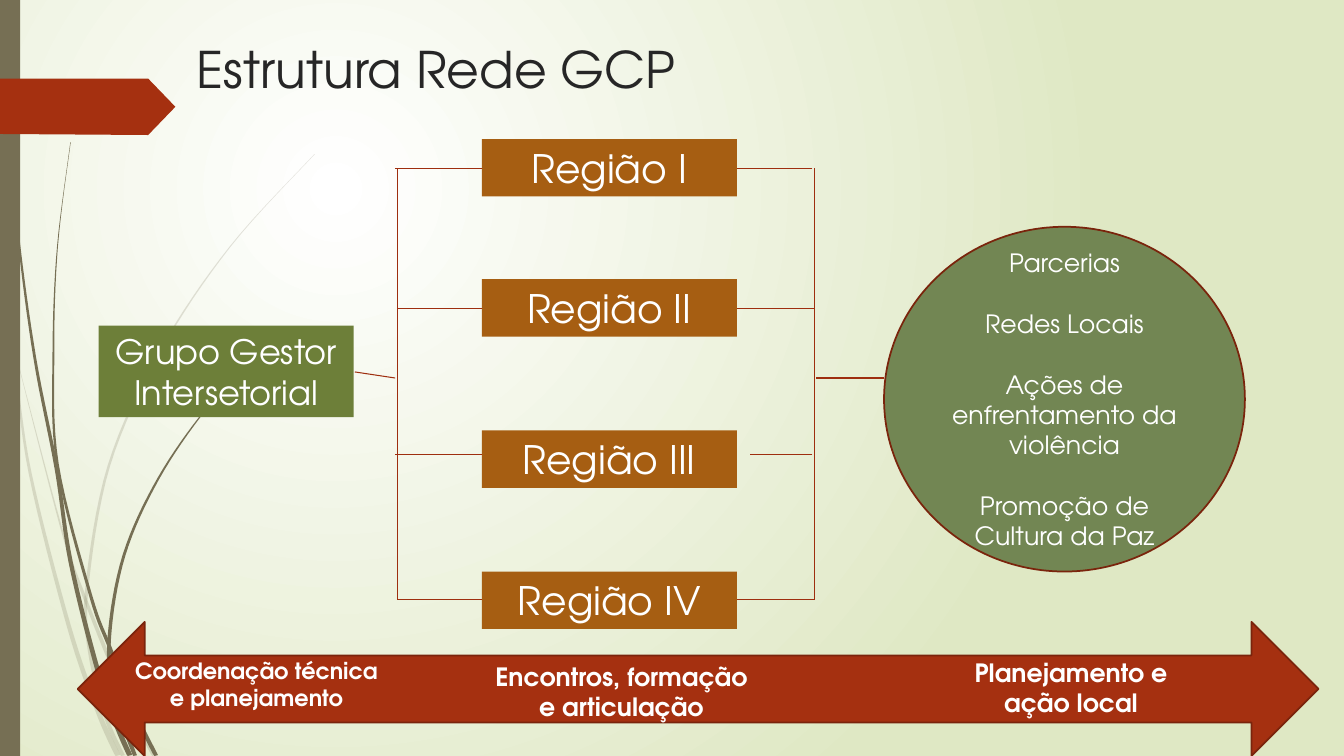
import math
from typing import NamedTuple

from lxml import etree
from pptx import Presentation
from pptx import util as u
from pptx.dml.color import RGBColor
from pptx.enum import shapes, text
from pptx.oxml import ns

WHITE = RGBColor(0xFF, 0xFF, 0xFF)
PALE_GREEN = RGBColor(0xDF, 0xE8, 0xC4)
OLIVE = RGBColor(0x6D, 0x7F, 0x39)
SAGE = RGBColor(0x72, 0x86, 0x53)
TAUPE = RGBColor(0x76, 0x6F, 0x54)
RUST = RGBColor(0xA5, 0x30, 0x10)
RUST_LINE = RGBColor(0x9E, 0x2E, 0x0F)
DARK_RUST = RGBColor(0x7A, 0x24, 0x0C)
AMBER = RGBColor(0xA6, 0x5E, 0x12)
CHARCOAL = RGBColor(0x26, 0x26, 0x26)

FONT = "TeX Gyre Adventor"
CELL = u.Inches(0.1)
COLUMNS = 133.33
ROWS = 75
LEFT_BUS = 39.4
RIGHT_BUS = 80.8
REGION_LEFT = 47.8
REGION_WIDTH = 25.3
REGION_HEIGHT = 5.7
REGION_RIGHT = REGION_LEFT + REGION_WIDTH
STRAND_STEPS = 8

Point = tuple[float, float]


class Box(NamedTuple):
    left: float
    top: float
    width: float
    height: float


class Region(NamedTuple):
    name: str
    top: float
    branch: float
    left_end: float = LEFT_BUS
    right_start: float = REGION_RIGHT
    right_end: float = RIGHT_BUS


class Caption(NamedTuple):
    words: str
    box: Box
    size: int


class Strand(NamedTuple):
    points: list[Point]
    width: float
    opacity: int


REGIONS = [
    Region("Região I", 13.8, 16.7, left_end=39.2, right_end=80.6),
    Region("Região II", 27.7, 30.6),
    Region("Região III", 42.7, 45.1, 39.2, 74.4, 80.6),
    Region("Região IV", 56.7, 59.5),
]
CAPTIONS = [
    Caption("Coordenação técnica e planejamento", Box(11.6, 64.7, 27.7, 6.4), 16),
    Caption("Encontros, formação e articulação", Box(47.8, 65.1, 27.7, 7.1), 18),
    Caption("Planejamento e ação local", Box(92.4, 64.7, 27.7, 7.1), 18),
]
PARTNERSHIPS = [
    "Parcerias",
    "Redes Locais",
    "Ações de enfrentamento da violência",
    "Promoção de Cultura da Paz",
]
STRANDS = [
    Strand([(0, 29), (1.4, 36), (3, 47), (6.8, 62), (9.7, 70.5), (11.7, 75)], 0.5, 20),
    Strand([(1.4, 34.5), (6, 52.1), (8.4, 59.3), (12.5, 69.3), (15.3, 75)], 0.45, 20),
    Strand([(31.2, 15.3), (22.8, 24.5), (15.9, 34.8), (10.8, 46.2),
            (8.6, 58.5), (8.9, 64.6), (10.5, 71.1), (12.2, 75)], 0.4, 20),
    Strand([(0.4, 0), (0.75, 11), (1.8, 23.3), (3.45, 35.5), (5.6, 46.5),
            (7, 55.7), (9.5, 65.8), (11.4, 71.5), (12.9, 75)], 0.5, 100),
    Strand([(7, 14.1), (5.7, 24.5), (5.3, 34.9), (5.7, 46), (9, 59.1),
            (11, 64.5), (13.4, 70.7), (15.5, 75)], 0.4, 100),
    Strand([(26, 34.4), (20.5, 40.5), (15.7, 47.5), (12.3, 55.1),
            (10.85, 63.2), (11.3, 69), (13.4, 75)], 0.4, 100),
]
RIBBON = [(0, 7.8), (14.7, 7.8), (17.4, 10.6), (14.7, 13.4), (0, 13.3)]


def cells(*counts: float) -> list[int]:
    return [round(count * CELL) for count in counts]


def paint(shape, fill: RGBColor, outline: RGBColor | None = None) -> None:
    shape.shadow.inherit = False
    shape.fill.solid()
    shape.fill.fore_color.rgb = fill
    if outline is None:
        shape.line.fill.background()
    else:
        shape.line.color.rgb = outline
        shape.line.width = u.Pt(1.25)


def write(shape, lines: list[str], size: int, bold: bool = False, gap: float = 0) -> None:
    frame = shape.text_frame
    frame.word_wrap = True
    frame.text = "\n".join(lines)
    for index, paragraph in enumerate(frame.paragraphs):
        paragraph.alignment = text.PP_ALIGN.CENTER
        paragraph.space_before = u.Pt(gap if index else 0)
        paragraph.font.name = FONT
        paragraph.font.size = u.Pt(size)
        paragraph.font.bold = bold
        paragraph.font.color.rgb = WHITE


def add_preset(slide, kind, box: Box, fill: RGBColor, outline: RGBColor | None = None):
    shape = slide.shapes.add_shape(kind, *cells(*box))
    paint(shape, fill, outline)
    return shape


def add_outline(slide, points: list[Point], fill: RGBColor, opacity: int = 100) -> None:
    corners = [cells(*point) for point in points]
    builder = slide.shapes.build_freeform(*corners[0], scale=1.0)
    builder.add_line_segments(corners[1:], close=True)
    shape = builder.convert_to_shape()
    paint(shape, fill)
    if opacity < 100:
        color = shape.fill._xPr.find(".//" + ns.qn("a:srgbClr"))
        etree.SubElement(color, ns.qn("a:alpha"), val=str(opacity * 1000))


def smooth_curve(points: list[Point]) -> list[Point]:
    padded = [points[0], *points, points[-1]]
    curve = []
    for before, start, end, after in zip(padded, padded[1:], padded[2:], padded[3:]):
        for step in range(STRAND_STEPS):
            t = step / STRAND_STEPS
            curve.append(tuple(
                b + ((c - a) * t + (2 * a - 5 * b + 4 * c - d) * t**2
                     + (3 * b - a - 3 * c + d) * t**3) / 2
                for a, b, c, d in zip(before, start, end, after)))
    return [*curve, points[-1]]


def add_strand(slide, strand: Strand) -> None:
    curve = smooth_curve(strand.points)
    last = len(curve) - 1
    near, far = [], []
    for index, (x, y) in enumerate(curve):
        before, after = curve[max(index - 1, 0)], curve[min(index + 1, last)]
        run, rise = after[0] - before[0], after[1] - before[1]
        half = strand.width / 2 * max(0.1, math.sin(math.pi * index / last / 2))
        reach = half / math.hypot(run, rise)
        for side, sign in ((near, 1), (far, -1)):
            edge_y = y + sign * run * reach
            side.append((max(x - sign * rise * reach, 0), min(max(edge_y, 0), ROWS)))
    add_outline(slide, near + far[::-1], TAUPE, strand.opacity)


def add_line(slide, start: Point, end: Point) -> None:
    line = slide.shapes.add_connector(
        shapes.MSO_CONNECTOR.STRAIGHT, *cells(*start, *end))
    line.line.color.rgb = RUST_LINE
    line.line.width = u.Pt(0.75)
    etree.SubElement(line._element.spPr, ns.qn("a:effectLst"))


def add_background(slide) -> None:
    fill = slide.background.fill
    fill.gradient()
    for stop, color, position in zip(fill.gradient_stops, (WHITE, PALE_GREEN), (0, 1)):
        stop.color.rgb = color
        stop.position = position
    gradient = slide._element.find(".//" + ns.qn("a:gradFill"))
    gradient.remove(gradient.find(ns.qn("a:lin")))
    circle = etree.SubElement(gradient, ns.qn("a:path"))
    circle.set("path", "circle")
    etree.SubElement(circle, ns.qn("a:fillToRect"),
                     l="50000", t="50000", r="100000", b="100000")


def add_title(slide) -> None:
    title = slide.shapes.title
    title.left, title.top, title.width, title.height = cells(18.5, 3.3, 105, 7)
    title.text_frame.text = "Estrutura Rede GCP"
    title.text_frame.vertical_anchor = text.MSO_ANCHOR.MIDDLE
    paragraph = title.text_frame.paragraphs[0]
    paragraph.alignment = text.PP_ALIGN.LEFT
    paragraph.font.name = FONT
    paragraph.font.size = u.Pt(36)
    paragraph.font.color.rgb = CHARCOAL


def main() -> None:
    preset = shapes.MSO_SHAPE
    presentation = Presentation()
    presentation.slide_width, presentation.slide_height = cells(COLUMNS, ROWS)
    slide = presentation.slides.add_slide(presentation.slide_layouts[5])
    add_background(slide)
    add_title(slide)
    for strand in STRANDS:
        add_strand(slide, strand)
    add_preset(slide, preset.RECTANGLE, Box(0, 0, 2, ROWS), TAUPE)
    add_outline(slide, RIBBON, RUST)

    manager = add_preset(slide, preset.RECTANGLE, Box(9.8, 32.3, 25.3, 9.1), OLIVE)
    write(manager, ["Grupo Gestor Intersetorial"], 24)
    for region in REGIONS:
        box = Box(REGION_LEFT, region.top, REGION_WIDTH, REGION_HEIGHT)
        write(add_preset(slide, preset.RECTANGLE, box, AMBER), [region.name], 28)
        add_line(slide, (region.left_end, region.branch), (REGION_LEFT, region.branch))
        add_line(slide, (region.right_end, region.branch), (region.right_start, region.branch))
    for bus in (LEFT_BUS, RIGHT_BUS):
        add_line(slide, (bus, REGIONS[-1].branch), (bus, REGIONS[0].branch))
    add_line(slide, (35.2, 36.9), (39.2, 37.5))
    add_line(slide, (81, 37.5), (87.7, 37.5))

    partners = add_preset(slide, preset.OVAL, Box(87.7, 22.5, 35.8, 34.2), SAGE, DARK_RUST)
    write(partners, PARTNERSHIPS, 18, gap=21.7)
    add_preset(slide, preset.LEFT_RIGHT_ARROW, Box(7.7, 61.7, 123.1, 13.3), RUST, DARK_RUST)
    for caption in CAPTIONS:
        label = slide.shapes.add_textbox(*cells(*caption.box))
        write(label, [caption.words], caption.size, bold=True)
    presentation.save("out.pptx")


if __name__ == "__main__":
    main()
